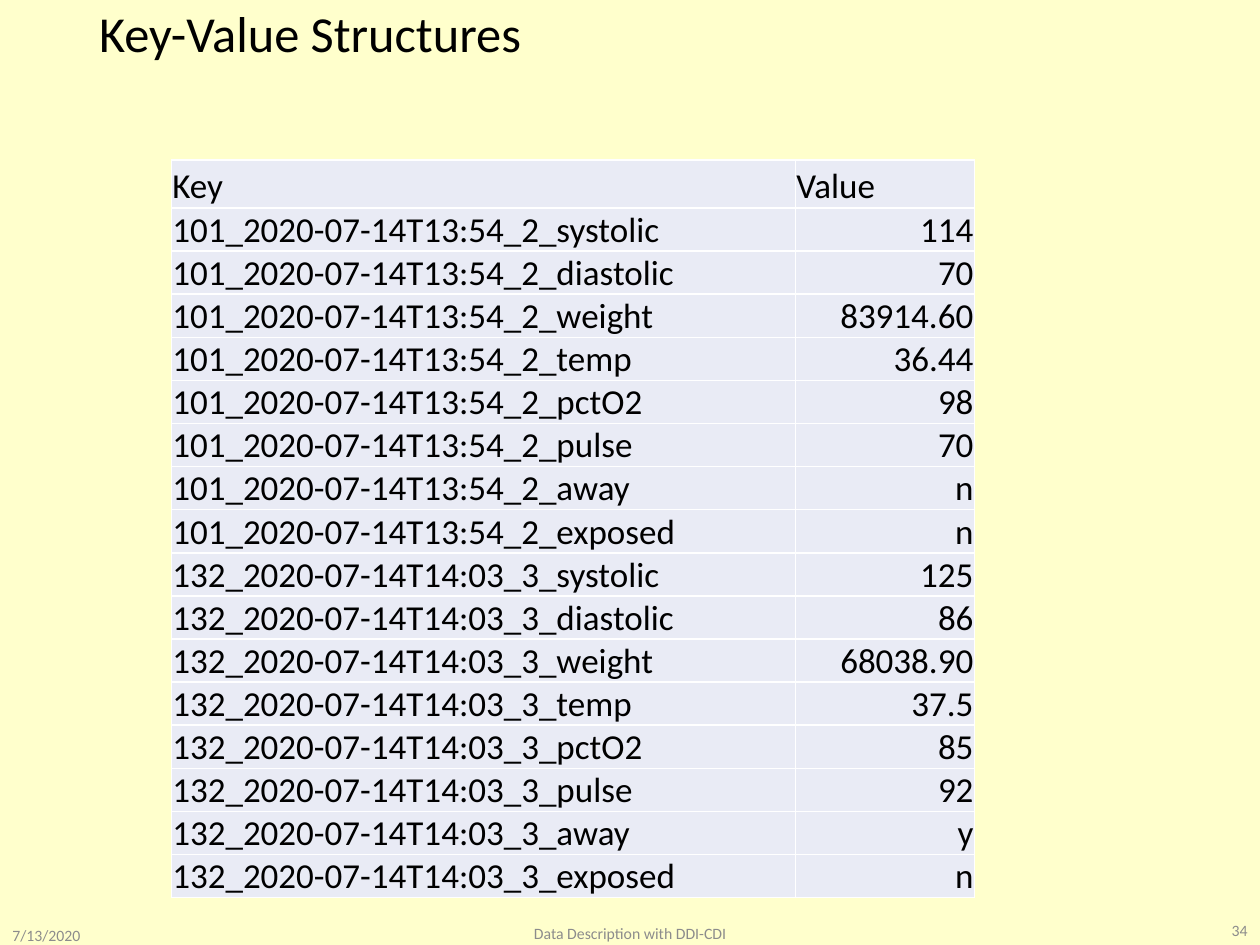
from dataclasses import dataclass

from lxml import etree
from pptx import Presentation
from pptx.dml.color import RGBColor
from pptx.enum import text as t
from pptx.oxml import ns
from pptx.util import Pt

BLACK = RGBColor(0x00, 0x00, 0x00)
GREY = RGBColor(0x8C, 0x8C, 0x8C)
WHITE = RGBColor(0xFF, 0xFF, 0xFF)
CREAM = RGBColor(0xFF, 0xFF, 0xCC)
LILAC = RGBColor(0xE9, 0xEB, 0xF5)
LEFT, MID, RIGHT = t.PP_ALIGN.LEFT, t.PP_ALIGN.CENTER, t.PP_ALIGN.RIGHT


@dataclass
class Label:
    words: str
    box: tuple
    align: t.PP_ALIGN


@dataclass
class Record:
    key: str
    values: tuple


LABELS = (
    Label("7/13/2020", (0, 529.2, 84.24, 10.8), LEFT),
    Label("Data Description with DDI-CDI", (238.32, 527.76, 243.36, 10.8), MID),
    Label("34", (655.92, 526.32, 64.08, 10.8), RIGHT),
)
FIELDS = ("systolic", "diastolic", "weight", "temp",
          "pctO2", "pulse", "away", "exposed")
RECORDS = (
    Record("101_2020-07-14T13:54_2",
           ("114", "70", "83914.60", "36.44", "98", "70", "n", "n")),
    Record("132_2020-07-14T14:03_3",
           ("125", "86", "68038.90", "37.5", "85", "92", "y", "n")),
)


def apply(item, form: dict) -> None:
    for name, value in form.items():
        setattr(item, name, value)


def write(frame, words: str, size: float, color: RGBColor, form: dict) -> None:
    """Put one formatted paragraph in a text frame."""
    para = frame.paragraphs[0]
    apply(para, form)
    run = para.add_run()
    run.text = words
    apply(run.font, {"name": "Calibri", "size": Pt(size)})
    run.font.color.rgb = color


def place(shape, box: tuple) -> None:
    names = ("left", "top", "width", "height")
    apply(shape, dict(zip(names, map(Pt, box))))


def add_label(slide, label: Label) -> None:
    frame = slide.shapes.add_textbox(*map(Pt, label.box)).text_frame
    apply(frame, {"word_wrap": True, "vertical_anchor": t.MSO_ANCHOR.MIDDLE})
    write(frame, label.words, 9, GREY, {"alignment": label.align})


def add_edges(cell, color: RGBColor) -> None:
    props = cell._tc.get_or_add_tcPr()
    for side in ("lnL", "lnR", "lnT", "lnB"):
        line = etree.SubElement(props, ns.qn(f"a:{side}"), w=str(Pt(1)))
        fill = etree.SubElement(line, ns.qn("a:solidFill"))
        etree.SubElement(fill, ns.qn("a:srgbClr"), val=str(color))


def fill_cell(cell, words: str, align: t.PP_ALIGN) -> None:
    apply(cell, {"margin_left": Pt(0.6), "margin_right": Pt(0.6),
                 "margin_top": Pt(0.6), "margin_bottom": 0,
                 "vertical_anchor": t.MSO_ANCHOR.BOTTOM})
    add_edges(cell, WHITE)
    cell.fill.solid()
    cell.fill.fore_color.rgb = LILAC
    write(cell.text_frame, words, 20, BLACK, {"alignment": align})


def add_pairs(slide, rows: list, box: tuple) -> None:
    frame = slide.shapes.add_table(len(rows), 2, *map(Pt, box))
    table = frame.table
    apply(table, {"first_row": False, "horz_banding": False})
    for col, width in zip(table.columns, (356.6, 102.4)):
        col.width = Pt(width)
    for i, pair in enumerate(rows):
        table.rows[i].height = Pt(18.9 if i else 27.4)
        for j, words in enumerate(pair):
            fill_cell(table.cell(i, j), words, RIGHT if i and j else LEFT)
    place(frame, box)


def main() -> None:
    deck = Presentation()
    apply(deck, {"slide_width": Pt(720), "slide_height": Pt(540)})
    slide = deck.slides.add_slide(deck.slide_layouts[5])
    slide.background.fill.solid()
    slide.background.fill.fore_color.rgb = CREAM

    # Title
    title = slide.shapes.title
    place(title, (49.5, 2.88, 621, 35.28))
    apply(title.text_frame, {"auto_size": t.MSO_AUTO_SIZE.NONE,
                             "vertical_anchor": t.MSO_ANCHOR.MIDDLE})
    write(title.text_frame, "Key-Value Structures", 28.8, BLACK,
          {"alignment": LEFT, "line_spacing": 0.9})

    # Footer
    for label in LABELS:
        add_label(slide, label)

    # One row for each field of each record
    rows = [("Key", "Value")]
    rows += [(f"{rec.key}_{field}", value)
             for rec in RECORDS for field, value in zip(FIELDS, rec.values)]
    add_pairs(slide, rows, (97.92, 91.44, 459, 421.2))

    deck.save("out.pptx")


if __name__ == "__main__":
    main()
